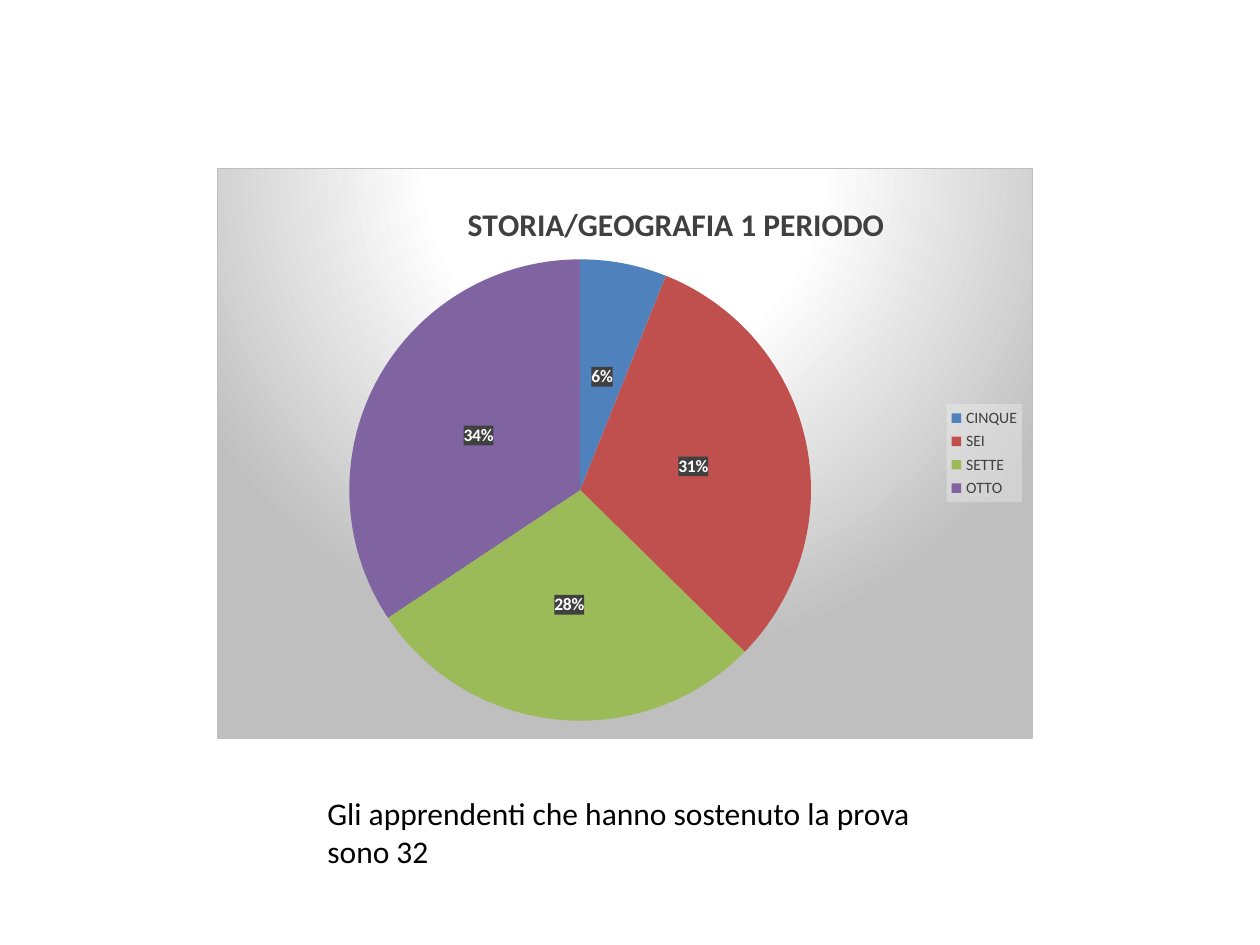
from lxml import etree
from pptx import Presentation
from pptx.chart.data import CategoryChartData
from pptx.dml.color import RGBColor
from pptx.enum.chart import XL_CHART_TYPE, XL_LABEL_POSITION, XL_LEGEND_POSITION
from pptx.oxml import parse_xml
from pptx.oxml.ns import nsdecls, qn
from pptx.util import Cm, Pt

PIE = XL_CHART_TYPE.PIE
CENTER = XL_LABEL_POSITION.CENTER
RIGHT = XL_LEGEND_POSITION.RIGHT

COLORS = {"text": "000000", "dark": "404040", "light": "FFFFFF",
          "border": "BFBFBF", "legend": "F2F2F2"}
TITLE = "STORIA/GEOGRAFIA 1 PERIODO"
NOTE = "Gli apprendenti che hanno sostenuto la prova sono 32"
GRADES = [("CINQUE", 6, "4F81BD"), ("SEI", 31, "C0504D"),
          ("SETTE", 28, "9BBB59"), ("OTTO", 34, "8064A2")]
CHART_BOX = (4.37, 3.38, 16.46, 11.51)
NOTE_BOX = (6.35, 15.88, 12.7, 1.8)
PLOT_LAYOUT = {"x": 0.16, "y": 0.16, "w": 0.57, "h": 0.81}
TITLE_LAYOUT = {"x": 0.3, "y": 0.05}
GRADIENT = [(0, "light"), (39, "light"), (100, "border")]
FONTS = {
    "chart": {"size": Pt(10), "name": "Calibri"},
    "title": {"size": Pt(18), "name": "Calibri", "bold": True},
    "legend": {"size": Pt(9), "name": "Calibri"},
    "label": {"size": Pt(10), "name": "Calibri", "bold": True},
    "note": {"size": Pt(18), "name": "Calibri"},
}


def set_font(font, style, color):
    for key, value in FONTS[style].items():
        setattr(font, key, value)
    font.color.rgb = RGBColor.from_string(COLORS[color])


def shape_props(content):
    return parse_xml(f'<c:spPr {nsdecls("c", "a")}>{content}</c:spPr>')


def clear_fill(color, alpha):
    return shape_props(f'<a:solidFill><a:srgbClr val="{COLORS[color]}">'
                       f'<a:alpha val="{alpha * 1000}"/></a:srgbClr></a:solidFill>')


def set_layout(parent, index, values, inner=False):
    for old in parent.findall(qn("c:layout")):
        parent.remove(old)
    layout = etree.Element(qn("c:layout"))
    manual = etree.SubElement(layout, qn("c:manualLayout"))
    items = [("layoutTarget", "inner")] if inner else []
    items += [(f"{axis}Mode", "edge") for axis in "xy"] + list(values.items())
    for tag, value in items:
        etree.SubElement(manual, qn(f"c:{tag}")).set("val", str(value))
    parent.insert(index, layout)


def add_pie(s):
    data = CategoryChartData()
    data.categories = [name for name, _, _ in GRADES]
    data.add_series("Series 1", [value for _, value, _ in GRADES])
    chart = s.shapes.add_chart(PIE, *map(Cm, CHART_BOX), data).chart
    set_font(chart.font, "chart", "text")

    chart.has_title = True
    tf = chart.chart_title.text_frame
    tf.text = TITLE
    set_font(tf.paragraphs[0].runs[0].font, "title", "dark")
    title = chart._chartSpace.chart.find(qn("c:title"))
    set_layout(title, 1, TITLE_LAYOUT)

    chart.has_legend = True
    legend = chart.legend
    legend.position = RIGHT
    legend.include_in_layout = False
    set_font(legend.font, "legend", "dark")
    legend._element.find(qn("c:txPr")).addprevious(clear_fill("legend", 39))

    plot = chart.plots[0]
    plot.vary_by_categories = True
    set_layout(chart._chartSpace.chart.plotArea, 0, PLOT_LAYOUT, inner=True)
    series = plot.series[0]
    for i, (_, _, color) in enumerate(GRADES):
        fill = series.points[i].format.fill
        fill.solid()
        fill.fore_color.rgb = RGBColor.from_string(color)

    labels = series.data_labels
    labels.show_percentage = True
    labels.show_value = False
    labels.number_format = "0%"
    labels.number_format_is_linked = False
    labels.position = CENTER
    set_font(labels.font, "label", "light")
    labels._element.find(qn("c:txPr")).addprevious(clear_fill("dark", 75))

    stops = "".join(f'<a:gs pos="{pos * 1000}"><a:srgbClr val="{COLORS[color]}"/></a:gs>'
                    for pos, color in GRADIENT)
    chart._chartSpace.chart.addnext(shape_props(
        f'<a:gradFill><a:gsLst>{stops}</a:gsLst><a:path path="circle">'
        '<a:fillToRect l="50000" t="-80000" r="50000" b="180000"/></a:path></a:gradFill>'
        f'<a:ln w="{Pt(0.75)}"><a:solidFill><a:srgbClr val="{COLORS["border"]}"/>'
        '</a:solidFill></a:ln>'))


def add_note(s):
    tf = s.shapes.add_textbox(*map(Cm, NOTE_BOX)).text_frame
    tf.word_wrap = True
    r = tf.paragraphs[0].add_run()
    r.text = NOTE
    set_font(r.font, "note", "text")


def main():
    prs = Presentation()
    prs.slide_width, prs.slide_height = Cm(25.4), Cm(19.05)
    s = prs.slides.add_slide(prs.slide_layouts[6])
    add_pie(s)
    add_note(s)
    prs.save("out.pptx")


if __name__ == "__main__":
    main()
